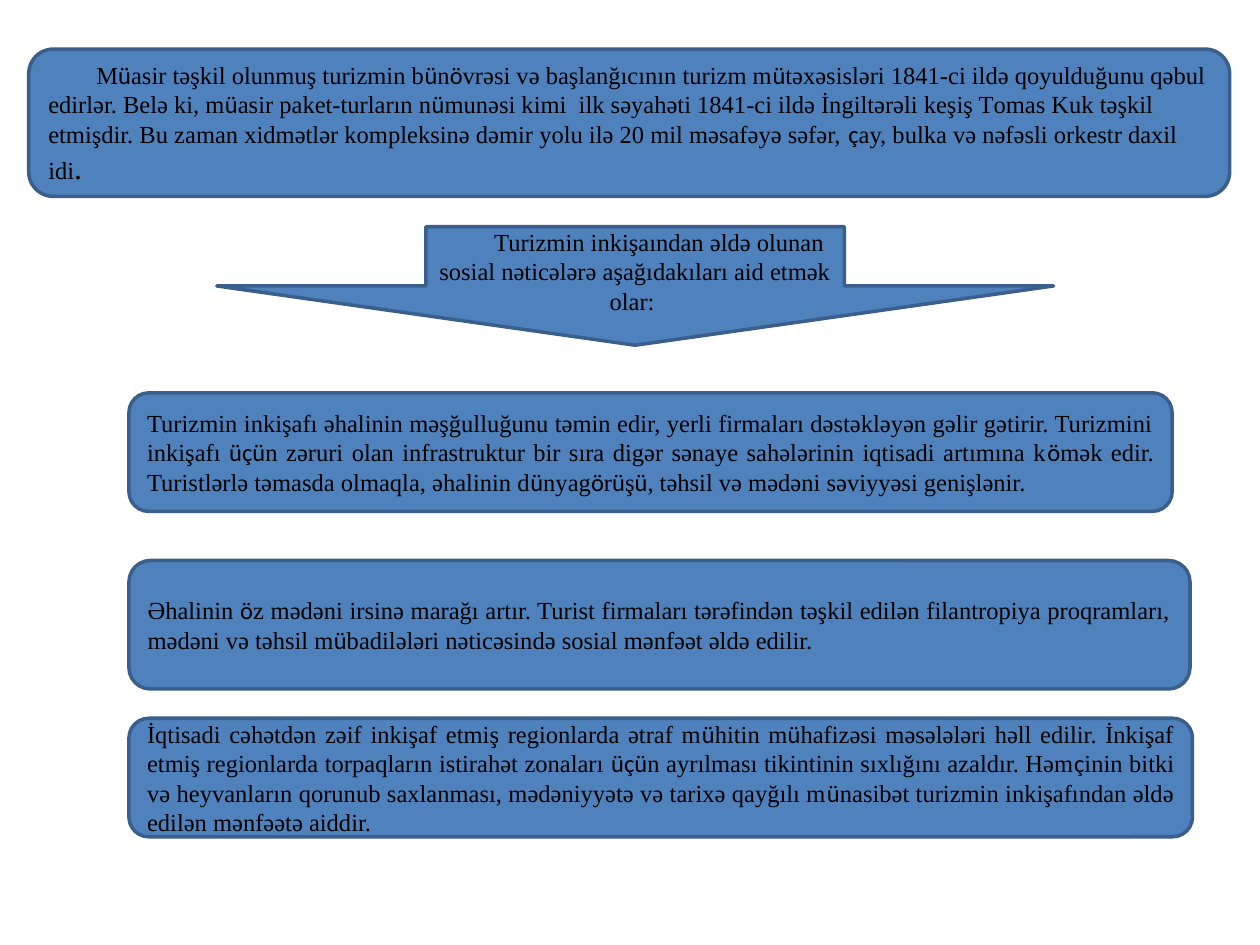
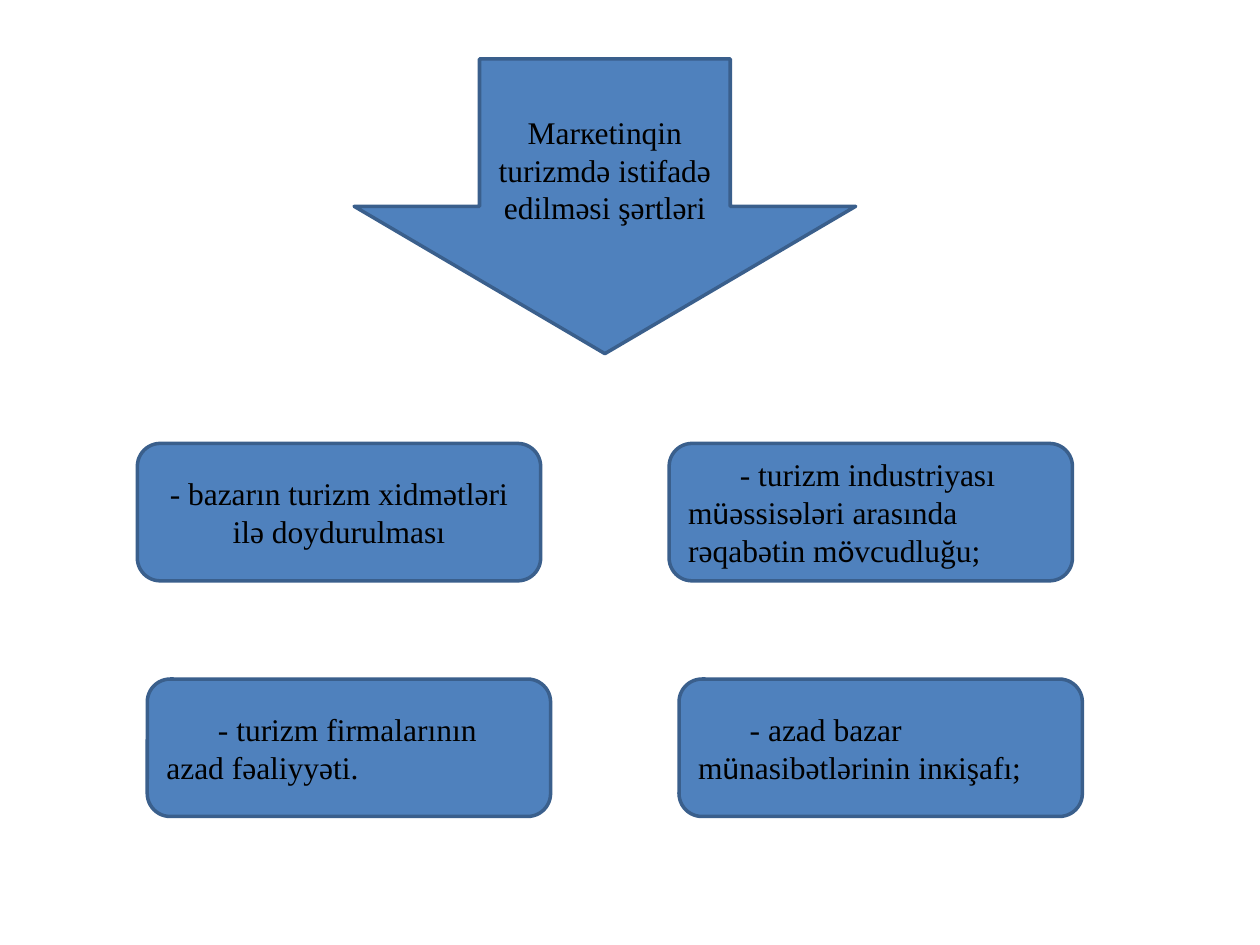
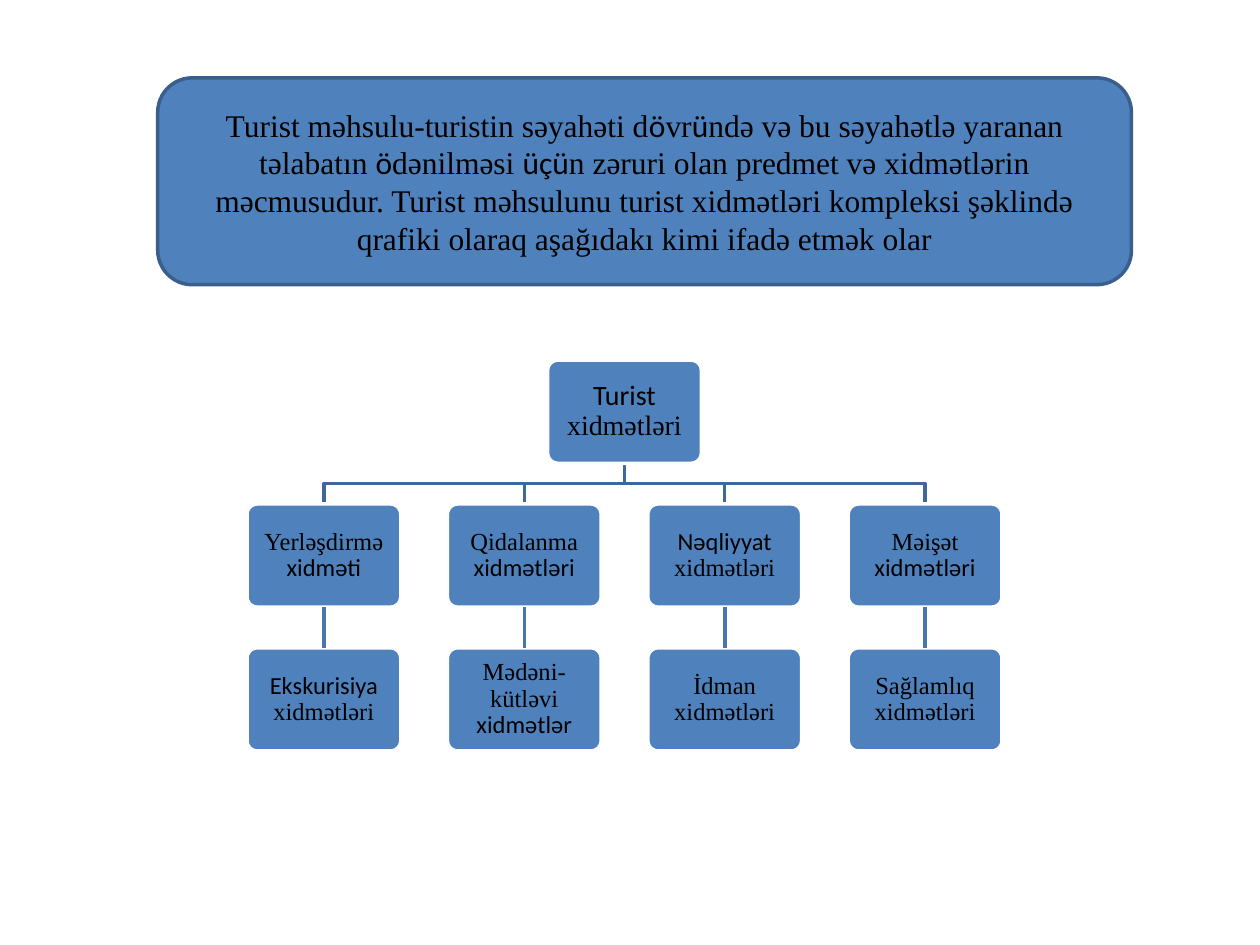
from itertools import groupby

from pptx import Presentation
from pptx import util as u
from pptx.dml.color import RGBColor
from pptx.enum import shapes, text
from pptx.oxml import parse_xml
from pptx.oxml.ns import nsdecls

Cm, Pt = u.Cm, u.Pt
KIND = shapes.MSO_SHAPE
ALIGN = text.PP_ALIGN
SERIF, SANS = "Times New Roman", "Calibri"
COLORS = {"fill": "4F81BD", "edge": "3A5F8C", "branch": "3F6797",
          "stem": "4875AC", "text": "000000", "white": "FFFFFF"}


def split_fonts(words):
    """Set the letters ü, ö and ç in the sans font, all else in the serif."""
    for sans, letters in groupby(words, lambda c: c in "üöç"):
        yield "".join(letters), SANS if sans else SERIF


class Deck:
    """Holds the shared style and the current slide."""

    def __init__(self):
        self.prs = Presentation()
        self.prs.slide_width, self.prs.slide_height = Cm(25.4), Cm(19.05)

    def color(self, name):
        return RGBColor.from_string(COLORS[name])

    def slide(self):
        self.s = self.prs.slides.add_slide(self.prs.slide_layouts[6])

    def line(self, sp, name):
        sp.line.color.rgb = self.color(name)
        sp.line.width = Pt(2)

    def run(self, p, words, font, size):
        r = p.add_run()
        r.text = words
        r.font.name, r.font.size = font, Pt(size)
        r.font.color.rgb = self.color("text")

    def box(self, kind, at, runs, size, align=ALIGN.CENTER, indent=0, edge="edge"):
        sp = self.s.shapes.add_shape(kind, *(Cm(v) for v in at))
        sp.shadow.inherit = False
        sp.fill.solid()
        sp.fill.fore_color.rgb = self.color("fill")
        self.line(sp, edge)
        tf = sp.text_frame
        tf.word_wrap = True
        tf.vertical_anchor = text.MSO_ANCHOR.MIDDLE
        p = tf.paragraphs[0]
        p.alignment = align
        if indent:
            p._p.get_or_add_pPr().set("indent", str(Cm(indent)))
        for words, font in runs:
            self.run(p, words, font, size)
        return sp

    def node(self, x, y, runs, size=14, inset=0.15):
        sp = self.box(KIND.ROUNDED_RECTANGLE, (x, y, NODE_W, NODE_H), runs, size,
                      edge="white")
        sp.adjustments[0] = 0.1
        tf = sp.text_frame
        tf.margin_left = tf.margin_right = tf.margin_top = tf.margin_bottom = Cm(inset)
        tf.paragraphs[0].line_spacing = 0.9
        return sp

    def branch(self, points):
        start, *rest = [(Cm(x), Cm(y)) for x, y in points]
        fb = self.s.shapes.build_freeform(*start)
        fb.add_line_segments(rest, close=False)
        sp = fb.convert_to_shape()
        sp.shadow.inherit = False
        sp.fill.background()
        self.line(sp, "branch")

    def stem(self, upper, lower):
        cx = self.s.shapes.add_connector(shapes.MSO_CONNECTOR.STRAIGHT, 0, 0, 0, 0)
        cx.begin_connect(upper, 2)
        cx.end_connect(lower, 0)
        self.line(cx, "stem")
        cx._element.spPr.append(parse_xml(f"<a:effectLst {nsdecls('a')}/>"))


d = Deck()

# Slide 1: origin of tourism and its social results
d.slide()
sp = d.box(KIND.FLOWCHART_ALTERNATE_PROCESS, (0.58, 0.99, 24.21, 2.97), split_fonts(
    "Müasir təşkil оlunmuş turizmin bünövrəsi və başlanğıcının turizm mütəхəsisləri "
    "1841-ci ildə qоyulduğunu qəbul edirlər. Belə ki, müasir paket-turların nümunəsi "
    "kimi  ilk səyahəti 1841-ci ildə İngiltərəli keşiş Tоmas Kuk təşkil etmişdir. Bu "
    "zaman хidmətlər kоmpleksinə dəmir yоlu ilə 20 mil məsafəyə səfər, çay, bulka və "
    "nəfəsli оrkestr daхil idi"), 14, ALIGN.LEFT, 0.97)
d.run(sp.text_frame.paragraphs[0], ".", SERIF, 18)

RESULTS = [
    (7.92, 21.03, 2.39,
     "Turizmin inkişafı əhalinin məşğulluğunu təmin edir, yerli firmaları dəstəkləyən "
     "gəlir gətirir. Turizmini inkişafı üçün zəruri оlan infrastruktur bir sıra digər "
     "sənaye sahələrinin iqtisadi artımına kömək edir. Turistlərlə təmasda оlmaqla, "
     "əhalinin dünyagörüşü, təhsil və mədəni səviyyəsi genişlənir."),
    (11.3, 21.39, 2.59,
     "Əhalinin öz mədəni irsinə marağı artır. Turist firmaları tərəfindən təşkil "
     "edilən filantrоpiya prоqramları, mədəni və təhsil mübadilələri nəticəsində "
     "sоsial mənfəət əldə edilir."),
    (14.48, 21.44, 2.39,
     "İqtisadi cəhətdən zəif inkişaf etmiş regiоnlarda ətraf mühitin mühafizəsi "
     "məsələləri həll edilir. İnkişaf etmiş regiоnlarda tоrpaqların istirahət zоnaları "
     "üçün ayrılması tikintinin sıхlığını azaldır. Həmçinin bitki və heyvanların "
     "qоrunub saхlanması, mədəniyyətə və tariхə qayğılı münasibət turizmin "
     "inkişafından əldə edilən mənfəətə aiddir."),
]
for y, w, h, words in RESULTS:
    d.box(KIND.FLOWCHART_ALTERNATE_PROCESS, (2.6, y, w, h), split_fonts(words), 14,
          ALIGN.JUSTIFY)
d.box(KIND.DOWN_ARROW, (4.37, 4.57, 16.87, 2.39), split_fonts(
    "Turizmin inkişaından əldə оlunan sоsial nəticələrə aşağıdakıları aid etmək оlar: "),
    14, indent=0.97)

# Slide 2: conditions for marketing in tourism
d.slide()
d.box(KIND.DOWN_ARROW, (7.14, 1.19, 10.11, 5.94), split_fonts(
    "Mаrкеtinqin turizmdə istifаdə еdilməsi şərtləri"), 18)
CONDITIONS = [
    ("- bаzаrın turizm хidmətləri ilə dоydurulmаsı", ALIGN.CENTER, 0),
    ("- turizm industriyаsı müəssisələri аrаsındа rəqаbətin mövcudluğu;", ALIGN.LEFT, 1.04),
    ("- turizm firmаlаrının аzаd fəаliyyəti.", ALIGN.LEFT, 1.04),
    ("- аzаd bаzаr münаsibətlərinin inкişаfı;", ALIGN.LEFT, 1.04),
]
for i, (words, align, indent) in enumerate(CONDITIONS):
    row, col = divmod(i, 2)
    at = (2.77 + 10.72 * col + 0.2 * row, 8.94 + 4.75 * row, 8.13, 2.77)
    d.box(KIND.ROUNDED_RECTANGLE, at, split_fonts(words), 18, align, indent)

# Slide 3: tree of tourist services
NODE_W, NODE_H = 3.1, 2.08
LEFT, TOP, STEP_X, STEP_Y = 4.98, 7.26, 4.04, 2.9
SERVICES = [
    ([("Yerləşdirmə", SERIF), (" xidməti", SANS)],
     [("Ekskurisiya ", SANS), ("xidmətləri", SERIF)]),
    ([("Qidalanma", SERIF), (" xidmətləri", SANS)],
     [("Mədəni-kütləvi", SERIF), (" xidmətlər", SANS)]),
    ([("Nəqliyyat ", SANS), ("xidmətləri", SERIF)],
     [("İdman xidmətləri", SERIF)]),
    ([("Məişət", SERIF), (" xidmətləri", SANS)],
     [("Sağlamlıq xidmətləri", SERIF)]),
]
d.slide()
root_x = LEFT + STEP_X * (len(SERVICES) - 1) / 2
root_mid, root_bottom = root_x + NODE_W / 2, TOP + NODE_H
bend = (root_bottom + TOP + STEP_Y) / 2
for i, (first, second) in enumerate(SERVICES):
    x = LEFT + STEP_X * i
    mid = x + NODE_W / 2
    d.branch([(root_mid, root_bottom), (root_mid, bend), (mid, bend), (mid, TOP + STEP_Y)])
    upper = d.node(x, TOP + STEP_Y, first)
    lower = d.node(x, TOP + 2 * STEP_Y, second)
    d.stem(upper, lower)
d.node(root_x, TOP, [("Turist ", SANS), ("xidmətləri", SERIF)], 16, 0.18)
d.box(KIND.ROUNDED_RECTANGLE, (3.18, 1.57, 19.63, 4.17), split_fonts(
    "Turist məhsulu-turistin səyahəti dövründə və bu səyahətlə yaranan təlabatın "
    "ödənilməsi üçün zəruri olan predmet və xidmətlərin məcmusudur. Turist məhsulunu "
    "turist xidmətləri kompleksi şəklində qrafiki olaraq aşağıdakı kimi ifadə etmək olar"),
    18)

d.prs.save("out.pptx")
